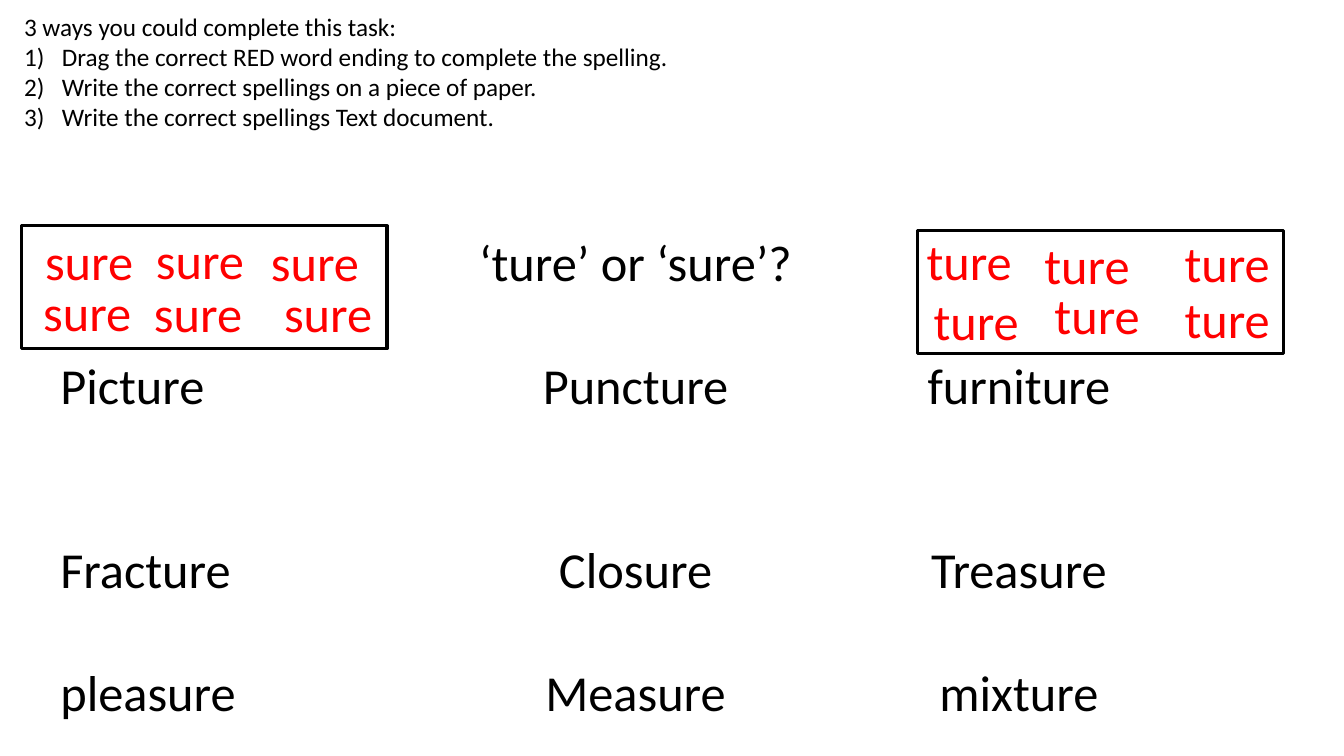
from lxml import etree
from pptx import Presentation
from pptx.dml.color import RGBColor
from pptx.enum.shapes import MSO_SHAPE
from pptx.enum.text import MSO_AUTO_SIZE, PP_ALIGN
from pptx.oxml.ns import qn
from pptx.util import Pt

LEFT, CENTER = PP_ALIGN.LEFT, PP_ALIGN.CENTER
FIT = MSO_AUTO_SIZE.SHAPE_TO_FIT_TEXT
RECTANGLE = MSO_SHAPE.RECTANGLE
FONT, BLACK, RED = "Calibri", "000000", "FF0000"

# Content
INTRO = "3 ways you could complete this task:"
WAYS = [
    "Drag the correct RED word ending to complete the spelling.",
    "Write the correct spellings on a piece of paper.",
    "Write the correct spellings Text document.",
]
# Text line number -> words in the three columns
WORD_ROWS = {
    0: ("", "‘ture’ or ‘sure’?", ""),
    2: ("Picture", "Puncture", "furniture"),
    5: ("Fracture", "Closure", "Treasure"),
    7: ("pleasure", "Measure", "mixture"),
}
COLUMN_ALIGN = (LEFT, CENTER, CENTER)
# Loosely scattered draggable endings: left, top of each
ENDINGS = {
    "sure": [(1.4, 160.6), (80.6, 159.8), (162.7, 161.3),
             (0, 197.3), (79.2, 198), (172.1, 198)],
    "ture": [(630, 160.6), (714.2, 163.4), (814.3, 162),
             (635, 203.8), (721.4, 199.4), (814.3, 202.3)],
}
FRAMES = [(15.1, 161.3), (655.2, 164.9)]

# Layout in points
WORDS_LEFT, WORDS_TOP = 36, 161.3
COLUMN_W, LINE_H, INSET = 273.85, 43.95, 7.2
WORD_H, ENDING_W = 51.1, 124.6
FRAME_W, FRAME_H = 261.4, 87.8
NUMBER_INDENT = 27


def color(hex_code):
    return RGBColor.from_string(hex_code)


def add_text(slide, box, lines, size, hex_code, align):
    text_box = slide.shapes.add_textbox(*(Pt(v) for v in box))
    frame = text_box.text_frame
    frame.word_wrap = True
    frame.auto_size = FIT
    frame.text = "\n".join(lines)
    for paragraph in frame.paragraphs:
        paragraph.alignment = align
        paragraph.font.name = FONT
        paragraph.font.size = Pt(size)
        paragraph.font.color.rgb = color(hex_code)
    return frame


def number(paragraph):
    properties = paragraph._p.get_or_add_pPr()
    properties.set("marL", str(Pt(NUMBER_INDENT)))
    properties.set("indent", str(-Pt(NUMBER_INDENT)))
    bullet = etree.Element(qn("a:buAutoNum"), type="arabicParenR")
    properties.insert(0, bullet)


def main():
    prs = Presentation()
    prs.slide_width, prs.slide_height = Pt(960), Pt(540)
    slide = prs.slides.add_slide(prs.slide_layouts[6])

    # Words in three columns
    for line, words in WORD_ROWS.items():
        for column, (word, align) in enumerate(zip(words, COLUMN_ALIGN)):
            if word:
                box = (WORDS_LEFT + column * COLUMN_W, WORDS_TOP + line * LINE_H,
                       COLUMN_W + 2 * INSET, WORD_H)
                add_text(slide, box, [word], 36, BLACK, align)

    # Red endings
    for ending, places in ENDINGS.items():
        for left, top in places:
            add_text(slide, (left, top, ENDING_W, WORD_H), [ending], 36, RED, CENTER)

    # Frames around the endings
    for left, top in FRAMES:
        frame = slide.shapes.add_shape(RECTANGLE, Pt(left), Pt(top),
                                       Pt(FRAME_W), Pt(FRAME_H))
        frame.shadow.inherit = False
        frame.fill.background()
        frame.line.color.rgb = color(BLACK)
        frame.line.width = Pt(2.25)

    # Instructions
    task = add_text(slide, (10.1, 4.3, 928.8, 94.3), [INTRO] + WAYS, 18, BLACK, LEFT)
    for way in task.paragraphs[1:]:
        number(way)

    prs.save("out.pptx")


if __name__ == "__main__":
    main()
